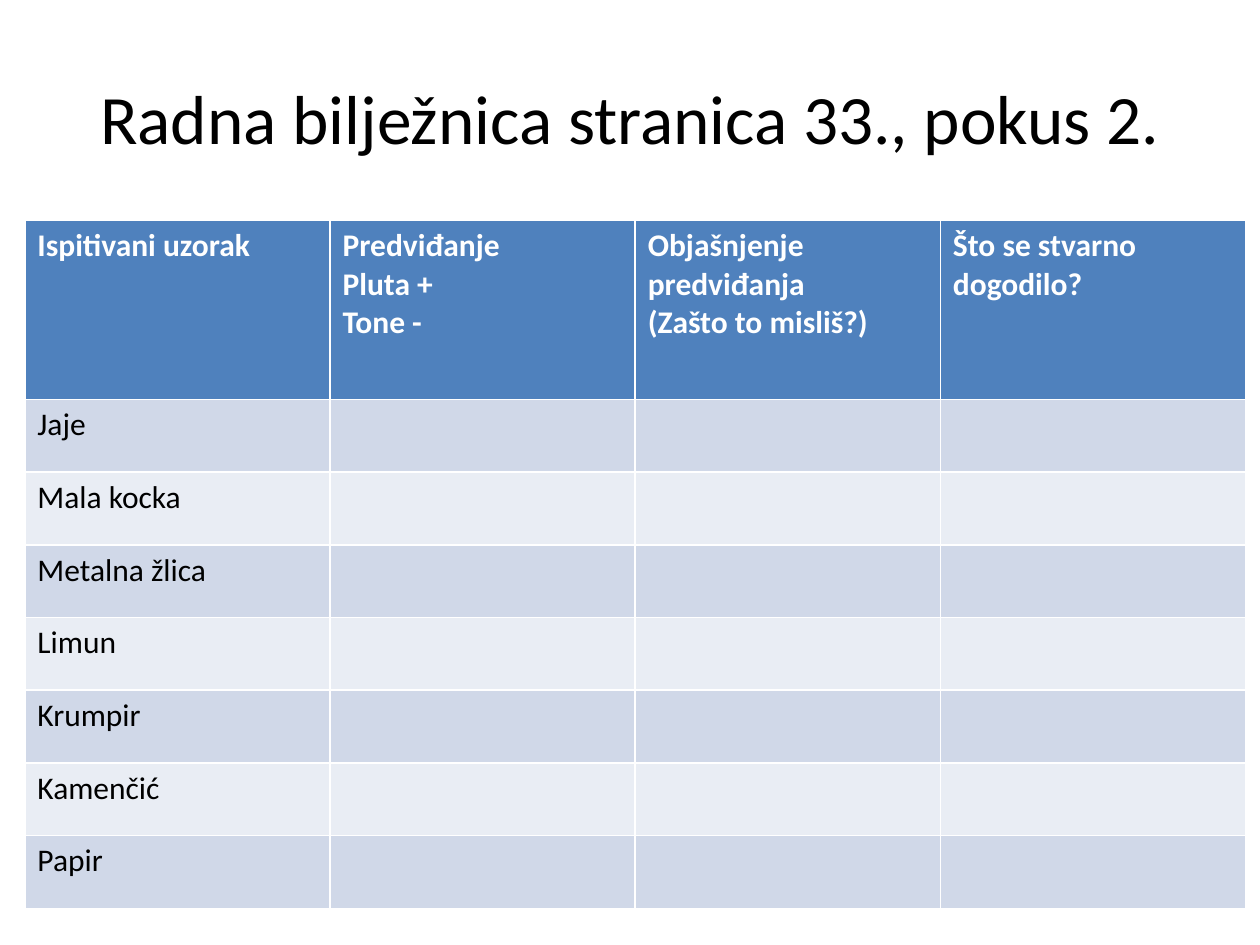
from dataclasses import dataclass

from pptx import Presentation
from pptx.dml.color import RGBColor
from pptx.enum.text import MSO_ANCHOR, PP_ALIGN
from pptx.util import Pt

CENTER = PP_ALIGN.CENTER
MIDDLE = MSO_ANCHOR.MIDDLE
TITLE_ONLY = 5


@dataclass(frozen=True)
class Theme:
    """Colours, font and type sizes of the slide."""
    font: str = "Calibri"
    title: float = 39.6
    body: float = 18
    ink: str = "000000"
    light: str = "FFFFFF"
    head: str = "4F81BD"
    bands: tuple = ("D0D8E8", "E9EDF4")


THEME = Theme()
HEADS = (
    "Ispitivani uzorak",
    "Predviđanje\nPluta +\nTone -",
    "Objašnjenje predviđanja\n(Zašto to misliš?)",
    "Što se stvarno dogodilo?",
)
SAMPLES = ("Jaje", "Mala kocka", "Metalna žlica", "Limun",
           "Krumpir", "Kamenčić", "Papir")


def style(frame, size, color, bold=False):
    """Format every run of a text frame."""
    for para in frame.paragraphs:
        for run in para.runs:
            font = run.font
            font.name = THEME.font
            font.size = Pt(size)
            font.bold = bold
            font.color.rgb = RGBColor.from_string(color)


def add_title(slide, text):
    """Place and format the slide title."""
    title = slide.shapes.title
    title.left, title.top = Pt(36), Pt(21.6)
    title.width, title.height = Pt(648), Pt(90)
    frame = title.text_frame
    frame.text = text
    frame.vertical_anchor = MIDDLE
    frame.paragraphs[0].alignment = CENTER
    style(frame, THEME.title, THEME.ink)


def fill_cell(cell, text, fill, color, bold=False):
    """Give a cell its fill and its text."""
    cell.fill.solid()
    cell.fill.fore_color.rgb = RGBColor.from_string(fill)
    cell.text_frame.text = text
    style(cell.text_frame, THEME.body, color, bold)


def add_grid(slide):
    """Add the table of samples with empty cells to fill in."""
    cols, rows = len(HEADS), len(SAMPLES) + 1
    top_row, row_step, col_step = 102.2, 41.56, 174.4
    table = slide.shapes.add_table(
        rows, cols, Pt(14.2), Pt(126),
        Pt(cols * col_step), Pt(top_row + len(SAMPLES) * row_step),
    ).table
    for col in table.columns:
        col.width = Pt(col_step)
    for i, row in enumerate(table.rows):
        row.height = Pt(row_step if i else top_row)
    for j, text in enumerate(HEADS):
        fill_cell(table.cell(0, j), text, THEME.head, THEME.light, True)
    for i, name in enumerate(SAMPLES):
        band = THEME.bands[i % len(THEME.bands)]
        for j in range(cols):
            text = "" if j else name
            fill_cell(table.cell(i + 1, j), text, band, THEME.ink)
            if j:
                table.cell(i + 1, j).text_frame.paragraphs[0].font.size = Pt(THEME.body)


def main():
    """Build and save the slide."""
    deck = Presentation()
    deck.slide_width, deck.slide_height = Pt(720), Pt(540)
    slide = deck.slides.add_slide(deck.slide_layouts[TITLE_ONLY])
    add_title(slide, "Radna bilježnica stranica 33., pokus 2.")
    add_grid(slide)
    deck.save("out.pptx")


if __name__ == "__main__":
    main()
